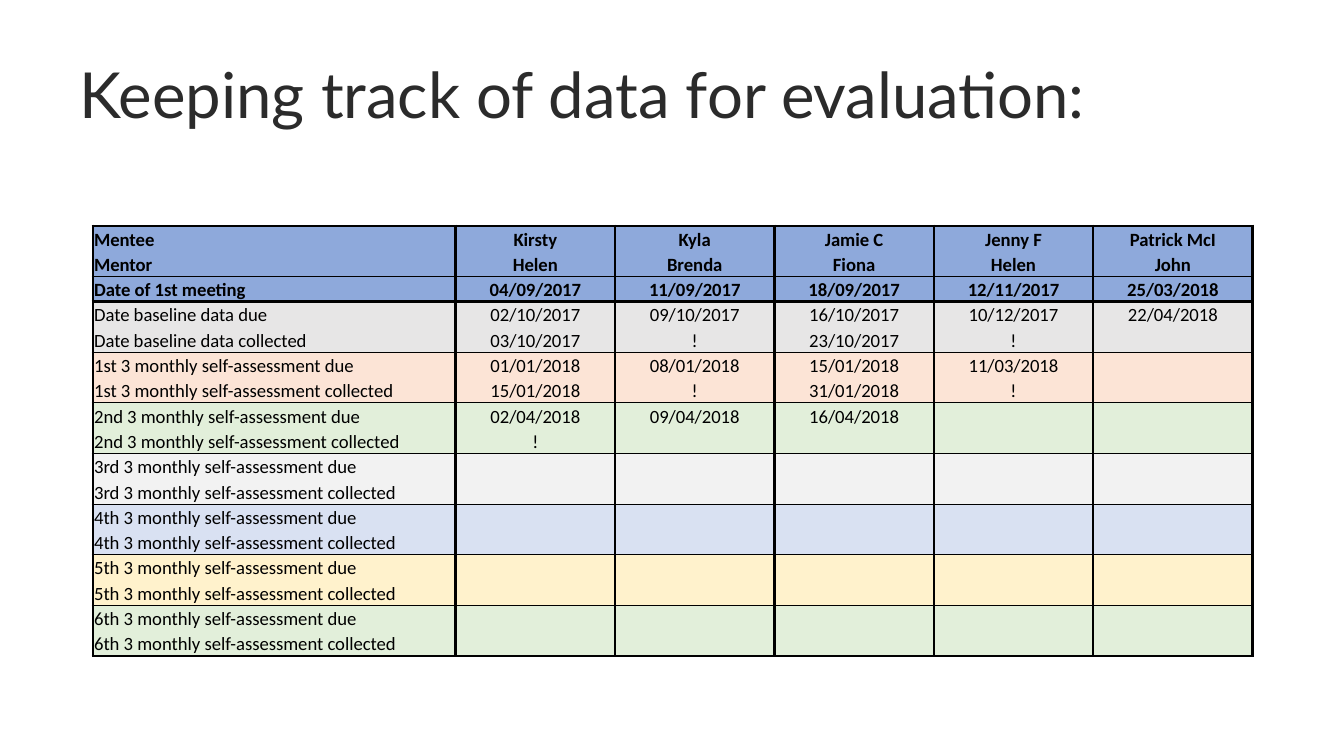
from dataclasses import dataclass

from lxml import etree
from pptx import Presentation
from pptx import util as u
from pptx.dml.color import RGBColor
from pptx.enum import text
from pptx.oxml import ns


@dataclass(frozen=True)
class Theme:
    title_font: str = "Lato"
    table_font: str = "Calibri"
    title_size: float = 34
    table_size: float = 10
    title_color: str = "2B2B2B"
    ink: str = "000000"
    heavy: float = 1.5
    thin: float = 0.5
    header: str = "8EA9DB"
    grey: str = "E7E6E6"
    peach: str = "FCE4D6"
    green: str = "E2EFDA"
    pale_grey: str = "F2F2F2"
    pale_blue: str = "D9E1F2"
    yellow: str = "FFF2CC"


@dataclass(frozen=True)
class Band:
    fill: str
    rows: tuple[tuple[str, ...], ...]
    rule_above: float
    bold: bool = False


THEME = Theme()
PAGE_WIDTH = 10
PAGE_HEIGHT = PAGE_WIDTH * 9 / 16
TABLE_LEFT, TABLE_TOP, TABLE_WIDTH, TABLE_HEIGHT = 0.69, 1.68, 8.63, 3.2
LABEL_WIDTH, PAIR_COUNT = 2.7, 5
COLUMN_WIDTHS = (LABEL_WIDTH,) + ((TABLE_WIDTH - LABEL_WIDTH) / PAIR_COUNT,) * PAIR_COUNT


def assessment(
    ordinal: str,
    fill: str,
    due: tuple[str, ...] = (),
    collected: tuple[str, ...] = (),
) -> Band:
    label = f"{ordinal} 3 monthly self-assessment"
    rows = ((f"{label} due", *due), (f"{label} collected", *collected))
    return Band(fill, rows, THEME.thin)


BANDS = (
    Band(
        THEME.header,
        (
            ("Mentee", "Kirsty", "Kyla", "Jamie C", "Jenny F", "Patrick McI"),
            ("Mentor", "Helen", "Brenda", "Fiona", "Helen", "John"),
        ),
        THEME.heavy,
        bold=True,
    ),
    Band(
        THEME.header,
        (("Date of 1st meeting", "04/09/2017", "11/09/2017", "18/09/2017",
          "12/11/2017", "25/03/2018"),),
        THEME.thin,
        bold=True,
    ),
    Band(
        THEME.grey,
        (
            ("Date baseline data due", "02/10/2017", "09/10/2017", "16/10/2017",
             "10/12/2017", "22/04/2018"),
            ("Date baseline data collected", "03/10/2017", "!", "23/10/2017", "!"),
        ),
        THEME.heavy,
    ),
    assessment(
        "1st",
        THEME.peach,
        ("01/01/2018", "08/01/2018", "15/01/2018", "11/03/2018"),
        ("15/01/2018", "!", "31/01/2018", "!"),
    ),
    assessment("2nd", THEME.green, ("02/04/2018", "09/04/2018", "16/04/2018"), ("!",)),
    assessment("3rd", THEME.pale_grey),
    assessment("4th", THEME.pale_blue),
    assessment("5th", THEME.yellow),
    assessment("6th", THEME.green),
)


def write(
    frame,
    words: str,
    *,
    font: str,
    size: float,
    color: str,
    bold: bool = False,
    align=text.PP_ALIGN.LEFT,
) -> None:
    para = frame.paragraphs[0]
    para.alignment = align
    if not words:
        end = etree.SubElement(para._p, ns.qn("a:endParaRPr"))
        end.set("sz", str(int(size * 100)))
        etree.SubElement(end, ns.qn("a:latin")).set("typeface", font)
        return
    span = para.add_run()
    span.text = words
    span.font.name = font
    span.font.size = u.Pt(size)
    span.font.bold = bold
    span.font.color.rgb = RGBColor.from_string(color)


def draw_border(cell, side: str, width: float) -> None:
    line = etree.SubElement(cell._tc.get_or_add_tcPr(), ns.qn(f"a:ln{side}"))
    line.set("w", str(u.Pt(width)))
    if not width:
        etree.SubElement(line, ns.qn("a:noFill"))
        return
    fill = etree.SubElement(line, ns.qn("a:solidFill"))
    etree.SubElement(fill, ns.qn("a:srgbClr")).set("val", THEME.ink)


def draw_cell(cell, words: str, band: Band, top: float, bottom: float, align) -> None:
    cell.margin_left = cell.margin_right = cell.margin_top = u.Inches(0.01)
    cell.margin_bottom = 0
    cell.vertical_anchor = text.MSO_ANCHOR.BOTTOM
    for side, width in zip("LRTB", (THEME.heavy, THEME.heavy, top, bottom)):
        draw_border(cell, side, width)
    cell.fill.solid()
    cell.fill.fore_color.rgb = RGBColor.from_string(band.fill)
    write(cell.text_frame, words, font=THEME.table_font, size=THEME.table_size,
          color=THEME.ink, bold=band.bold, align=align)


def draw_title(page, words: str) -> None:
    title = page.shapes.title
    title.left, title.top = u.Inches(0.49), u.Inches(0.36)
    title.width, title.height = u.Inches(9.32), u.Inches(1.41)
    frame = title.text_frame
    frame.word_wrap = True
    frame.auto_size = text.MSO_AUTO_SIZE.NONE
    frame.vertical_anchor = text.MSO_ANCHOR.TOP
    write(frame, words, font=THEME.title_font, size=THEME.title_size,
          color=THEME.title_color)


def draw_tracker(page, bands: tuple[Band, ...]) -> None:
    rows = [(band, row) for band in bands for row in band.rows]
    rules = [
        band.rule_above if index == 0 else 0
        for band in bands
        for index in range(len(band.rows))
    ] + [THEME.heavy]
    table = page.shapes.add_table(
        len(rows), len(COLUMN_WIDTHS), u.Inches(TABLE_LEFT), u.Inches(TABLE_TOP),
        u.Inches(TABLE_WIDTH), u.Inches(TABLE_HEIGHT),
    ).table
    table.first_row = table.horz_banding = False
    for column, width in zip(table.columns, COLUMN_WIDTHS):
        column.width = u.Inches(width)
    for row_index, (band, row) in enumerate(rows):
        table.rows[row_index].height = u.Inches(TABLE_HEIGHT / len(rows))
        for column_index in range(len(COLUMN_WIDTHS)):
            words = row[column_index] if column_index < len(row) else ""
            align = text.PP_ALIGN.CENTER if column_index else text.PP_ALIGN.LEFT
            draw_cell(table.cell(row_index, column_index), words, band,
                      rules[row_index], rules[row_index + 1], align)


def main() -> None:
    deck = Presentation()
    deck.slide_width, deck.slide_height = u.Inches(PAGE_WIDTH), u.Inches(PAGE_HEIGHT)
    page = deck.slides.add_slide(deck.slide_layouts[5])
    draw_title(page, "Keeping track of data for evaluation:")
    draw_tracker(page, BANDS)
    deck.save("out.pptx")


if __name__ == "__main__":
    main()
